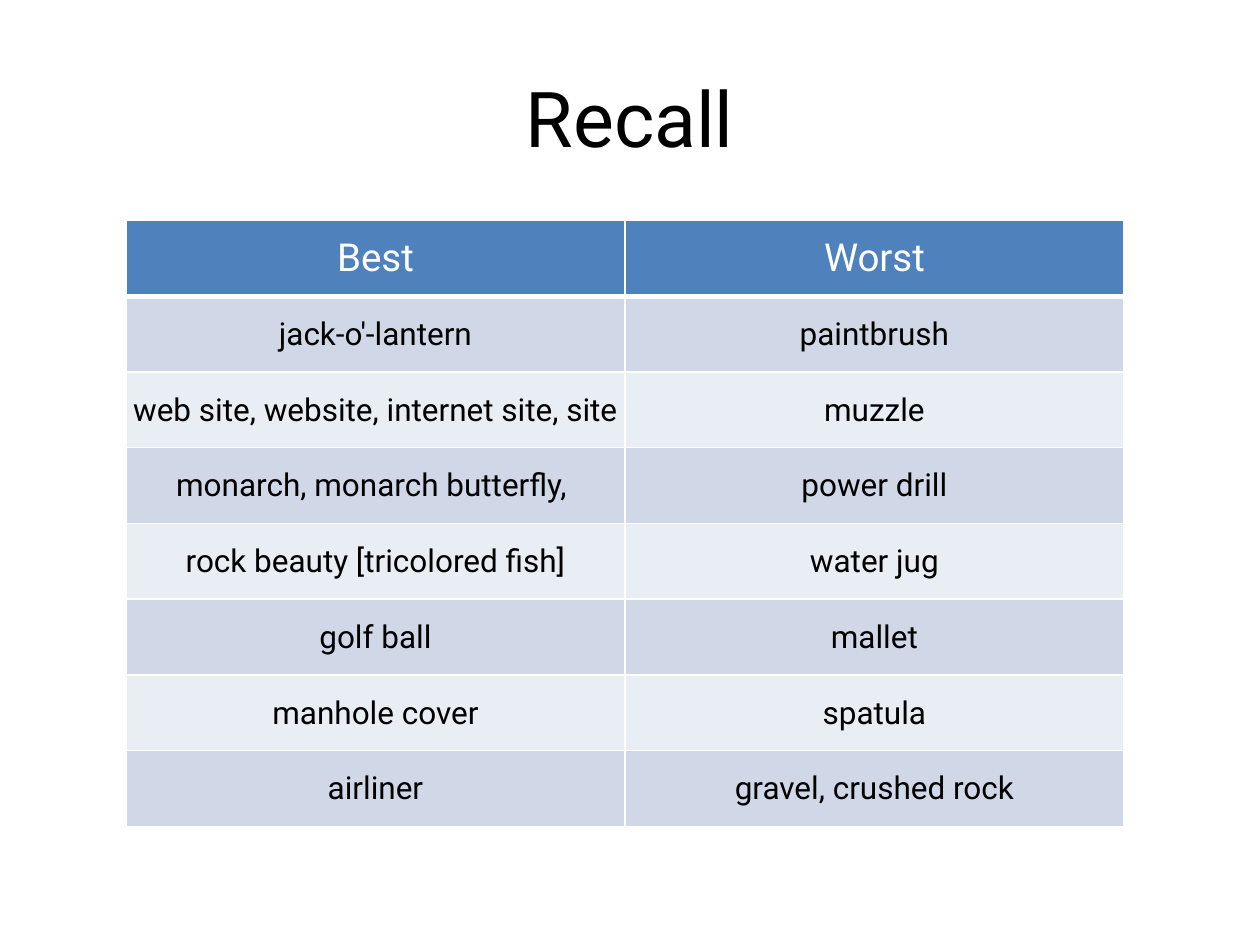
from lxml import etree
from pptx import Presentation
from pptx.dml.color import RGBColor
from pptx.enum.text import MSO_ANCHOR, PP_ALIGN
from pptx.oxml.ns import qn
from pptx.util import Inches, Pt

MIDDLE = MSO_ANCHOR.MIDDLE
CENTER = PP_ALIGN.CENTER
FONT = "Roboto"
BLACK = RGBColor(0x00, 0x00, 0x00)
WHITE = RGBColor(0xFF, 0xFF, 0xFF)
HEADER_BLUE = RGBColor(0x4F, 0x81, 0xBD)
BANDS = (RGBColor(0xE9, 0xED, 0xF4), RGBColor(0xD0, 0xD8, 0xE8))

SLIDE_WIDTH, SLIDE_HEIGHT = Inches(10), Inches(7.5)
TABLE_WIDTH, TABLE_HEIGHT = Inches(7.92), Inches(4.81)

RECALL_ROWS = (
    ("Best", "Worst"),
    ("jack-o'-lantern", "paintbrush"),
    ("web site, website, internet site, site", "muzzle"),
    ("monarch, monarch butterfly, ", "power drill"),
    ("rock beauty [tricolored fish]", "water jug"),
    ("golf ball", "mallet"),
    ("manhole cover", "spatula"),
    ("airliner", "gravel, crushed rock"),
)


def write_centered(text_frame, text, size, color):
    """Write one centred run into a text frame."""
    paragraph = text_frame.paragraphs[0]
    paragraph.alignment = CENTER
    run = paragraph.add_run()
    run.text = text
    run.font.name = FONT
    run.font.size = Pt(size)
    run.font.color.rgb = color


def add_title(slide, text):
    """Add the slide title across the top."""
    title = slide.shapes.add_textbox(
        SLIDE_WIDTH * 0.05, SLIDE_HEIGHT * 0.04, SLIDE_WIDTH * 0.9, Inches(1.25)
    )
    title.text_frame.word_wrap = True
    title.text_frame.vertical_anchor = MIDDLE
    write_centered(title.text_frame, text, 44, BLACK)


def set_borders(cell, top, bottom):
    """Draw white cell borders, with top and bottom widths in points."""
    properties = cell._tc.get_or_add_tcPr()
    widths = {"a:lnL": 1, "a:lnR": 1, "a:lnT": top, "a:lnB": bottom}
    for position, (side, width) in enumerate(widths.items()):
        line = etree.Element(qn(side), w=str(Pt(width)))
        fill = etree.SubElement(line, qn("a:solidFill"))
        etree.SubElement(fill, qn("a:srgbClr"), val=str(WHITE))
        properties.insert(position, line)


def style_cell(cell, text, row):
    """Fill and label a cell according to its row."""
    is_header = row == 0
    cell.vertical_anchor = MIDDLE
    if not is_header:
        cell.margin_left = cell.margin_right = cell.margin_top = Inches(0.01)
        cell.margin_bottom = 0
    cell.fill.solid()
    cell.fill.fore_color.rgb = HEADER_BLUE if is_header else BANDS[row % 2]
    set_borders(cell, top=3 if row == 1 else 1, bottom=3 if is_header else 1)
    write_centered(
        cell.text_frame, text, 22 if is_header else 18, WHITE if is_header else BLACK
    )


def add_recall_table(slide, rows):
    """Add the table of best and worst recalled classes."""
    table = slide.shapes.add_table(
        len(rows), len(rows[0]), Inches(1), Inches(1.75), TABLE_WIDTH, TABLE_HEIGHT
    ).table
    for row, labels in enumerate(rows):
        for column, label in enumerate(labels):
            style_cell(table.cell(row, column), label, row)


def main():
    """Build and save the recall slide."""
    presentation = Presentation()
    presentation.slide_width = SLIDE_WIDTH
    presentation.slide_height = SLIDE_HEIGHT
    slide = presentation.slides.add_slide(presentation.slide_layouts[6])
    add_title(slide, "Recall")
    add_recall_table(slide, RECALL_ROWS)
    presentation.save("out.pptx")


if __name__ == "__main__":
    main()
